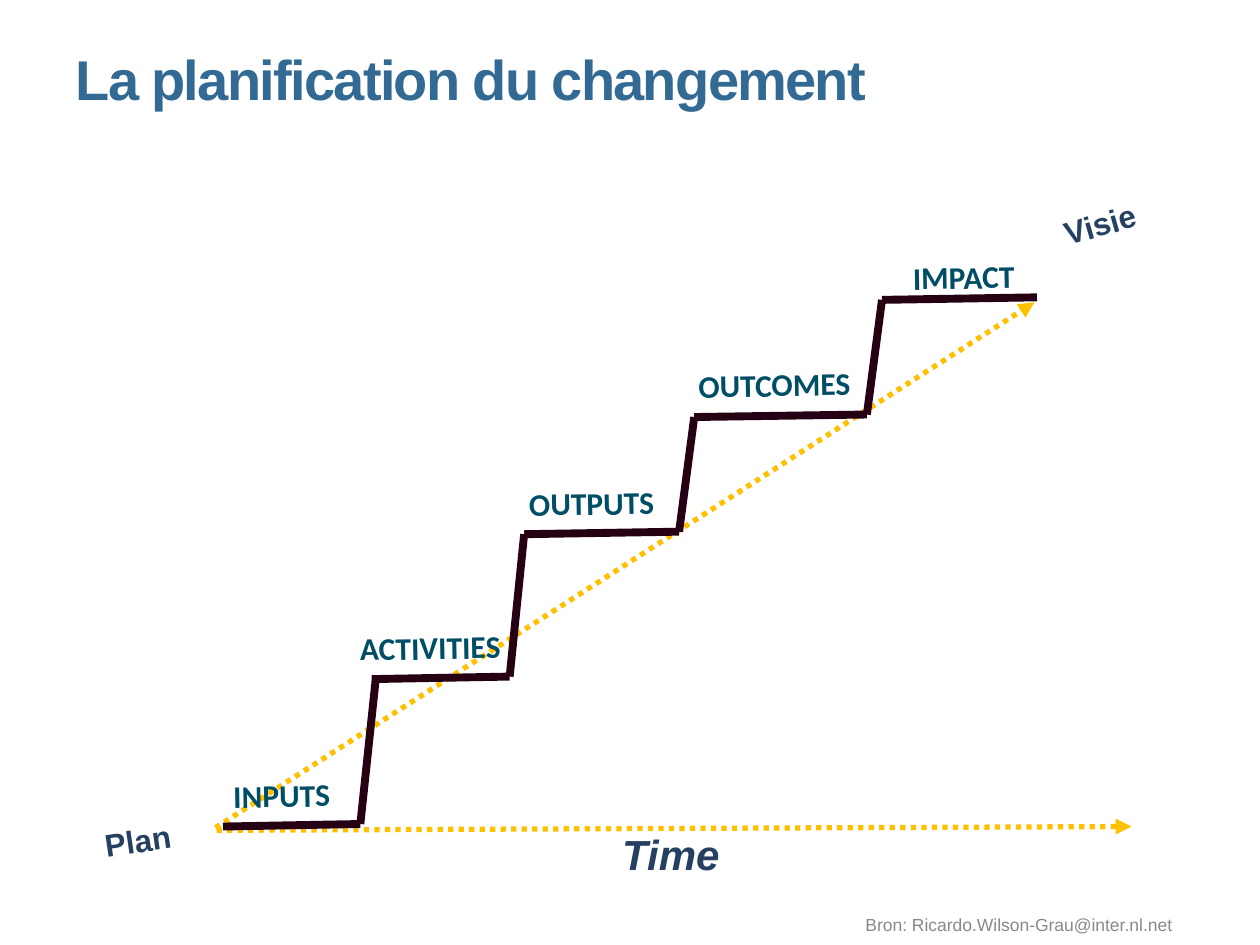
from itertools import pairwise

from lxml.etree import SubElement
from pptx import Presentation
from pptx.dml.color import RGBColor
from pptx.enum.dml import MSO_LINE_DASH_STYLE as DASH
from pptx.enum.shapes import MSO_CONNECTOR
from pptx.enum.text import MSO_ANCHOR as ANCHOR, PP_ALIGN as ALIGN
from pptx.oxml.ns import qn
from pptx.util import Inches, Pt

# Grid of 100 columns by 75 rows
WIDTH, HEIGHT = Inches(10), Inches(7.5)
COLUMNS, ROWS = 100, 75

BLUE = RGBColor(0x32, 0x6A, 0x94)
NAVY = RGBColor(0x25, 0x40, 0x61)
TEAL = RGBColor(0x00, 0x4D, 0x66)
PLUM = RGBColor(0x26, 0x00, 0x13)
GOLD = RGBColor(0xFF, 0xC0, 0x00)
GREY = RGBColor(0x89, 0x89, 0x89)

# Corners of the staircase, from the bottom step upwards
FLIGHTS = [
    [(17.7, 65.6), (28.6, 65.4), (29.8, 54.1)],
    [(29.5, 53.9), (40.45, 53.7), (41.6, 42.4), (53.9, 42.2), (55.1, 33.1),
     (68.8, 32.9), (70, 23.8), (82.3, 23.6)],
]
# Step name, left, top, width, alignment
STEPS = [
    ("INPUTS", 14.1, 61.1, 16.5, ALIGN.CENTER),
    ("ACTIVITIES", 23.6, 49.4, 17.1, ALIGN.RIGHT),
    ("OUTPUTS", 39.7, 37.9, 14.5, ALIGN.CENTER),
    ("OUTCOMES", 54.2, 28.5, 14.5, ALIGN.CENTER),
    ("IMPACT", 67, 20, 14.5, ALIGN.RIGHT),
]
# Ends of the dotted arrows: the planned path and the time axis
ARROWS = [((17.1, 65.7), (82.1, 24)), ((17.2, 65.9), (89.8, 65.6))]


def col(count):
    return round(WIDTH * count / COLUMNS)


def row(count):
    return round(HEIGHT * count / ROWS)


def place(shape, left, top, width, height):
    shape.left, shape.top = col(left), row(top)
    shape.width, shape.height = col(width), row(height)


def write(shape, text, size, color, font="Arial", bold=True, align=ALIGN.LEFT,
          anchor=ANCHOR.TOP, wrap=True):
    frame = shape.text_frame
    frame.text = text
    frame.word_wrap = wrap
    frame.vertical_anchor = anchor
    para = frame.paragraphs[0]
    para.alignment = align
    span = para.runs[0]
    span.font.name, span.font.size, span.font.bold = font, Pt(size), bold
    span.font.color.rgb = color
    return span


def add_label(page, text, at, size, color, turn=0, **style):
    box = page.shapes.add_textbox(0, 0, 0, 0)
    place(box, *at)
    box.rotation = turn
    return write(box, text, size, color, **style)


def add_line(page, start, end, color, weight):
    line = page.shapes.add_connector(
        MSO_CONNECTOR.STRAIGHT, col(start[0]), row(start[1]), col(end[0]), row(end[1]))
    line.line.color.rgb = color
    line.line.width = Pt(weight)
    SubElement(line.element.spPr, qn("a:effectLst"))
    return line


def add_dotted_arrow(page, start, end):
    arrow = add_line(page, start, end, GOLD, 3)
    arrow.line.dash_style = DASH.ROUND_DOT
    SubElement(arrow.line._get_or_add_ln(), qn("a:tailEnd"), type="triangle")


def add_title(page, text):
    title = page.shapes.title
    place(title, 5, 3, 83.3, 12.5)
    span = write(title, text, 32, BLUE)
    span.font._element.set("spc", "-100")


def main():
    deck = Presentation()
    deck.slide_width, deck.slide_height = WIDTH, HEIGHT
    page = deck.slides.add_slide(deck.slide_layouts[5])
    add_title(page, "La planification du changement")

    # Arrows lie behind the stairs
    for start, end in ARROWS:
        add_dotted_arrow(page, start, end)

    # Staircase and its step names
    for corners in FLIGHTS:
        for start, end in pairwise(corners):
            add_line(page, start, end, PLUM, 4.5)
    for name, left, top, width, align in STEPS:
        add_label(page, name, (left, top, width, 4), 18, TEAL, turn=-1,
                  font="Calibri", align=align)

    # Start, end and time axis
    add_label(page, "Plan", (5.6, 64.7, 11.2, 7.7), 18, NAVY, turn=-8.4,
              align=ALIGN.CENTER, wrap=False)
    add_label(page, "Visie", (82.2, 15.7, 11.2, 7.7), 18, NAVY, turn=-16.1,
              align=ALIGN.CENTER, wrap=False)
    time = add_label(page, "Time", (48.4, 65.3, 11.4, 5.1), 24, NAVY)
    time.font.italic = True

    # Source line
    add_label(page, "Bron: Ricardo.Wilson-Grau@inter.nl.net", (65, 71.4, 31.7, 4),
              10, GREY, bold=False, align=ALIGN.CENTER, anchor=ANCHOR.MIDDLE)

    deck.save("out.pptx")


if __name__ == "__main__":
    main()
